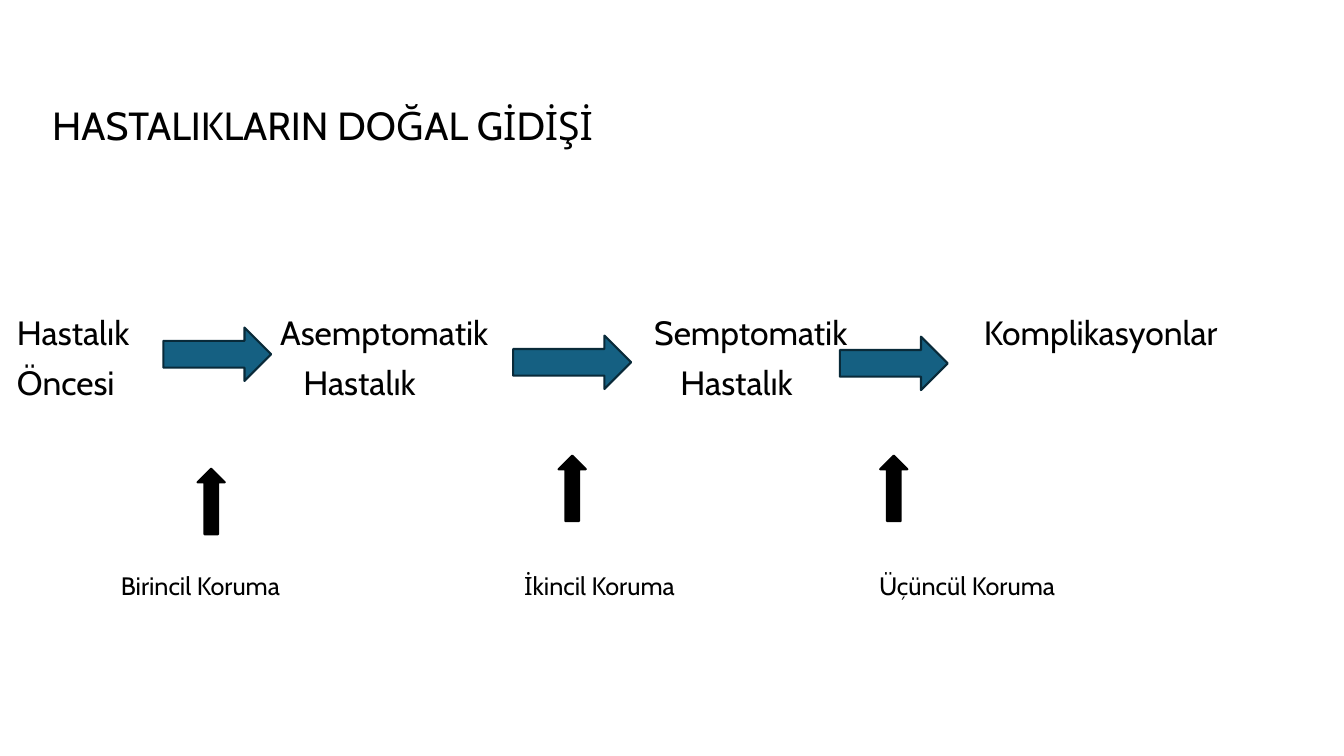
from lxml.etree import SubElement
from pptx import Presentation
from pptx.dml.color import RGBColor
from pptx.enum.shapes import MSO_SHAPE
from pptx.oxml.ns import qn
from pptx.util import Pt

PX = 9144  # one px is a hundredth of an inch
COLORS = {"text": "000000", "stage": "156082", "stage_line": "092A39",
          "protection": "000000"}
FONT = "Cabin"


def color(name):
    return RGBColor.from_string(COLORS[name])


def scaled(box):
    return [length * PX for length in box]


def add_tab_stops(para, stops):
    tab_list = SubElement(para._p.get_or_add_pPr(), qn("a:tabLst"))
    for stop in stops:
        SubElement(tab_list, qn("a:tab"), pos=str(stop * PX), algn="l")


def add_text(page, box, lines, size, line_spacing=None, gap=0):
    """Each line is a pair: its tab-separated words and its tab stops."""
    frame = page.shapes.add_textbox(*scaled(box)).text_frame
    frame.word_wrap = True
    for index, (words, stops) in enumerate(lines):
        para = frame.add_paragraph() if index else frame.paragraphs[0]
        para.text = "\t".join(words)
        if line_spacing:
            para.line_spacing = line_spacing
        if index:
            para.space_before = Pt(gap)
        if stops:
            add_tab_stops(para, stops)
        para.font.name = FONT
        para.font.size = Pt(size)
        para.font.color.rgb = color("text")


def add_arrow(page, kind, box, fill, line):
    arrow = page.shapes.add_shape(kind, *scaled(box))
    arrow.shadow.inherit = False
    arrow.fill.solid()
    arrow.fill.fore_color.rgb = color(fill)
    arrow.line.color.rgb = color(line)
    arrow.line.width = Pt(1.5)


def add_stages(page, box):
    left, top, width, height = box
    lines = [
        (["Hastalık", "Asemptomatik", "Semptomatik", "Komplikasyonlar"],
         [261, 632, 959]),
        (["Öncesi", "Hastalık", "Hastalık"], [284, 658]),
    ]
    add_text(page, box, lines, 24, line_spacing=0.9, gap=10)
    for x, y, length in [(155, 16, 107), (502, 24, 117), (826, 25, 107)]:
        add_arrow(page, MSO_SHAPE.RIGHT_ARROW, (left + x, top + y, length, 53),
                  "stage", "stage_line")


def add_protections(page, box):
    left, top, width, height = box
    for x, y in [(86, 13), (444, 0), (763, 0)]:
        add_arrow(page, MSO_SHAPE.UP_ARROW, (left + x, top + y, 27, 65),
                  "protection", "protection")
    labels = ["Birincil Koruma", "İkincil Koruma", "Üçüncül Koruma"]
    add_text(page, (left, top + 109, width, 40), [(labels, [400, 752])], 18)


def main():
    deck = Presentation()
    deck.slide_width, deck.slide_height = 1333 * PX, 750 * PX
    page = deck.slides.add_slide(deck.slide_layouts[6])

    # Title
    add_text(page, (42, 96, 936, 57),
             [(["HASTALIKLARIN DOĞAL GİDİŞİ"], [])], 28)
    # Course of the disease
    add_stages(page, (7, 309, 1320, 100))
    # Levels of protection
    add_protections(page, (110, 452, 1003, 149))

    deck.save("out.pptx")


if __name__ == "__main__":
    main()
